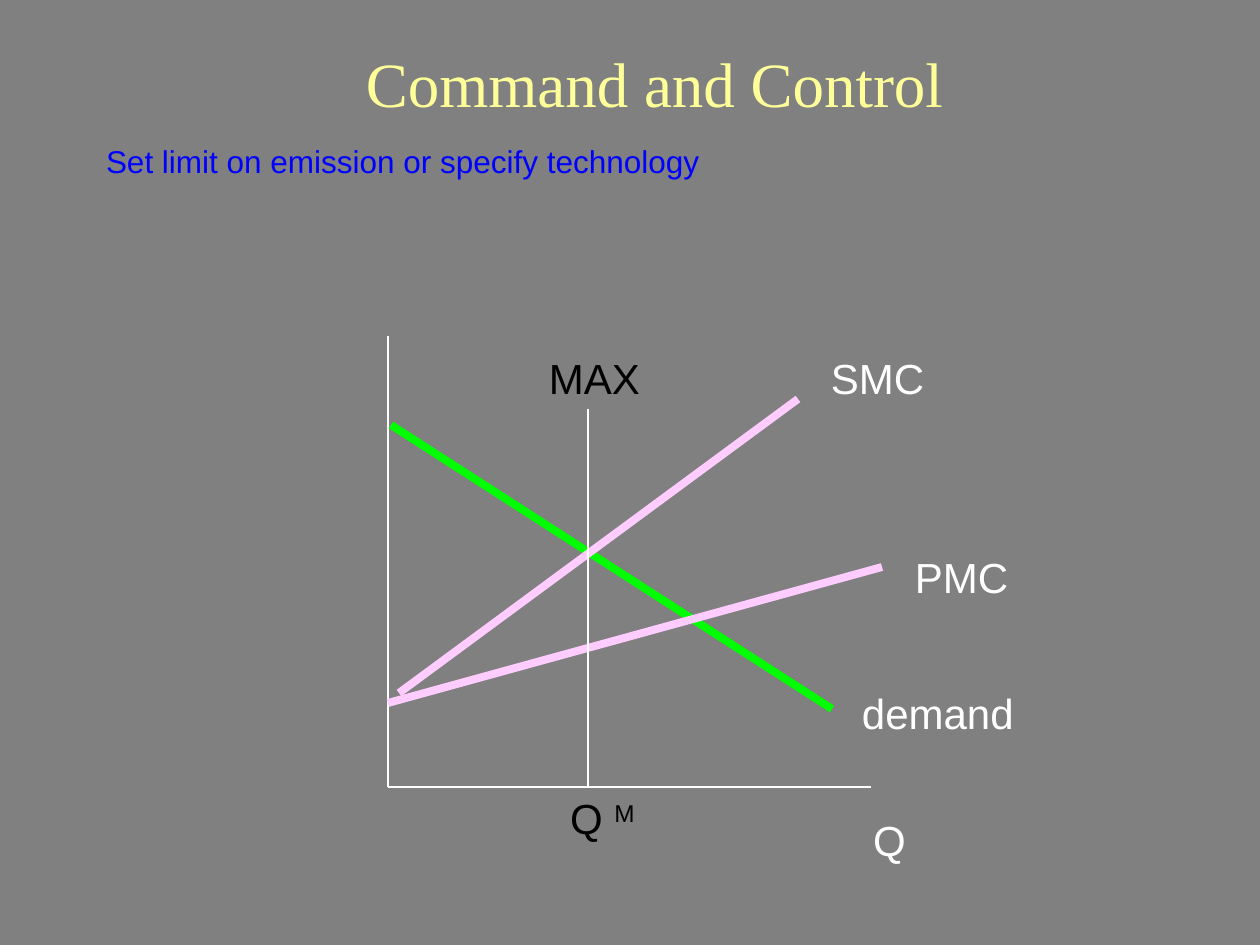
"""Build the Command and Control supply and demand slide."""
from lxml import etree
from pptx import Presentation
from pptx.dml.color import RGBColor
from pptx.enum.shapes import MSO_CONNECTOR
from pptx.enum.text import PP_ALIGN
from pptx.oxml.ns import qn
from pptx.util import Emu, Pt

STRAIGHT = MSO_CONNECTOR.STRAIGHT
LEFT, CENTER = PP_ALIGN.LEFT, PP_ALIGN.CENTER
COLORS = {
    "background": "808080",
    "title": "FFFF99",
    "subtitle": "0000FF",
    "white": "FFFFFF",
    "black": "000000",
    "demand": "00FF00",
    "cost": "FFCCFF",
}


def px(n):
    return Emu(round(n * 914400 / 126))


def add_text(s, text, box, size, color, font="Arial", align=LEFT, inset=(12, 6)):
    tf = s.shapes.add_textbox(*map(px, box)).text_frame
    tf.word_wrap = True
    tf.margin_left, tf.margin_top = map(px, inset)
    p = tf.paragraphs[0]
    p.text = text
    p.alignment = align
    p.font.size = Pt(size)
    p.font.name = font
    p.font.color.rgb = RGBColor.from_string(COLORS[color])
    return p


prs = Presentation()
prs.slide_width, prs.slide_height = px(1260), px(945)
s = prs.slides.add_slide(prs.slide_layouts[6])
s.background.fill.solid()
s.background.fill.fore_color.rgb = RGBColor.from_string(COLORS["background"])

add_text(s, "Command and Control", (116, 32, 1018, 63), 36, "title",
         "Times New Roman", CENTER, (72, 13))
add_text(s, "Set limit on emission or specify technology",
         (94, 136, 1092, 79), 18, "subtitle")

lines = [
    ((388, 336), (388, 787), "white", 0.75),
    ((388, 787), (871, 787), "white", 0.75),
    ((391, 425), (832, 709), "demand", 4.5),
    ((388, 703), (882, 567), "cost", 4.5),
    ((399, 693), (798, 399), "cost", 4.5),
    ((588, 409), (588, 787), "white", 0.75),
]
for start, end, color, width in lines:
    line = s.shapes.add_connector(STRAIGHT, *map(px, start + end))
    line.line.color.rgb = RGBColor.from_string(COLORS[color])
    line.line.width = Pt(width)
    etree.SubElement(line._element.spPr, qn("a:effectLst"))

labels = [
    ("SMC", (819, 347, 441, 63), "white", 12),
    ("PMC", (903, 546, 242, 63), "white", 12),
    ("demand", (850, 682, 242, 63), "white", 12),
    ("Q", (861, 809, 84, 63), "white", 12),
    ("MAX", (525, 347, 168, 63), "black", 24),
]
for text, box, color, indent in labels:
    add_text(s, text, box, 24, color, inset=(indent, 6))

p = add_text(s, "Q ", (546, 787, 105, 63), 24, "black", inset=(24, 6))
r = p.add_run()
r.text = "M"
r.font._element.set("baseline", "30000")

prs.save("out.pptx")
